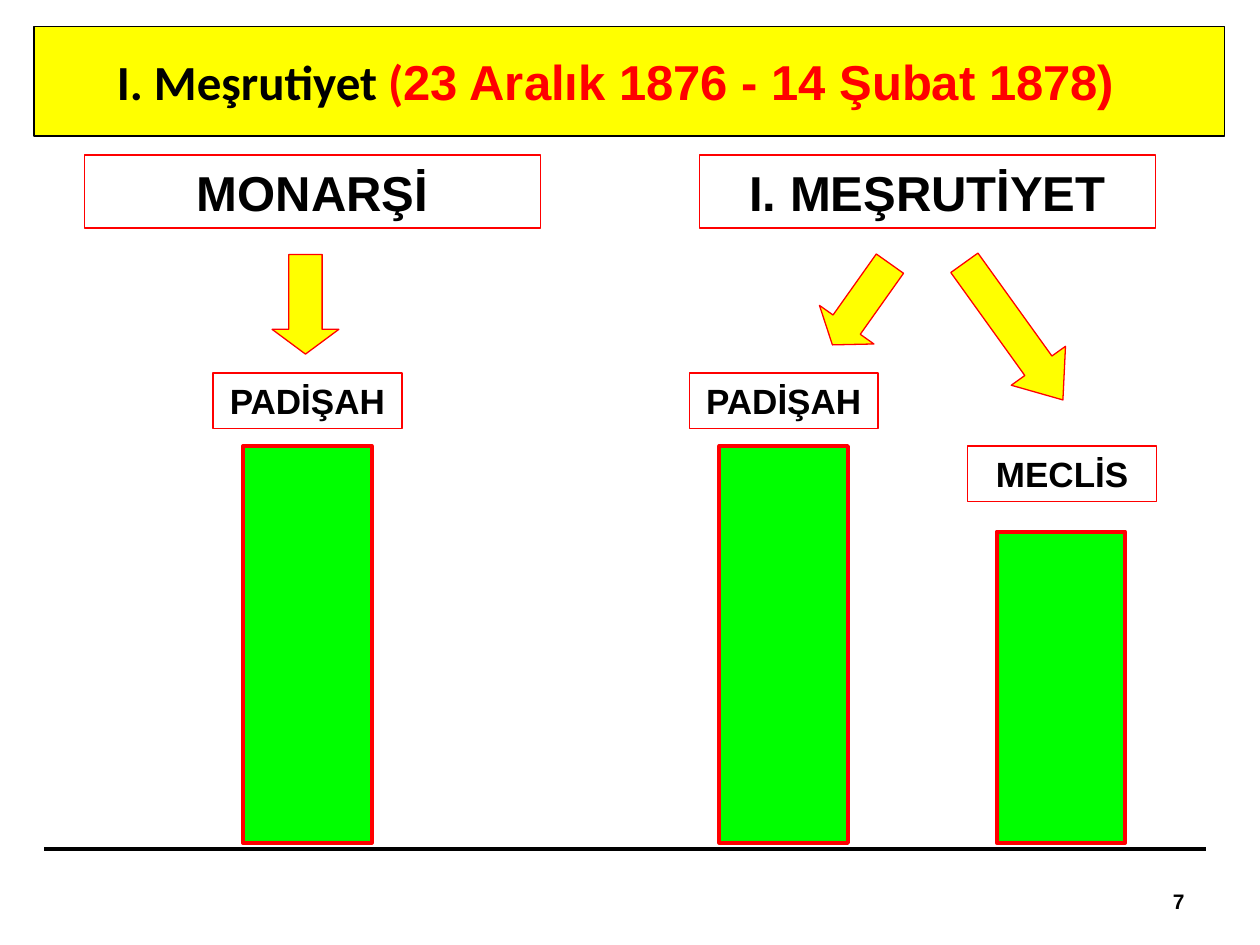
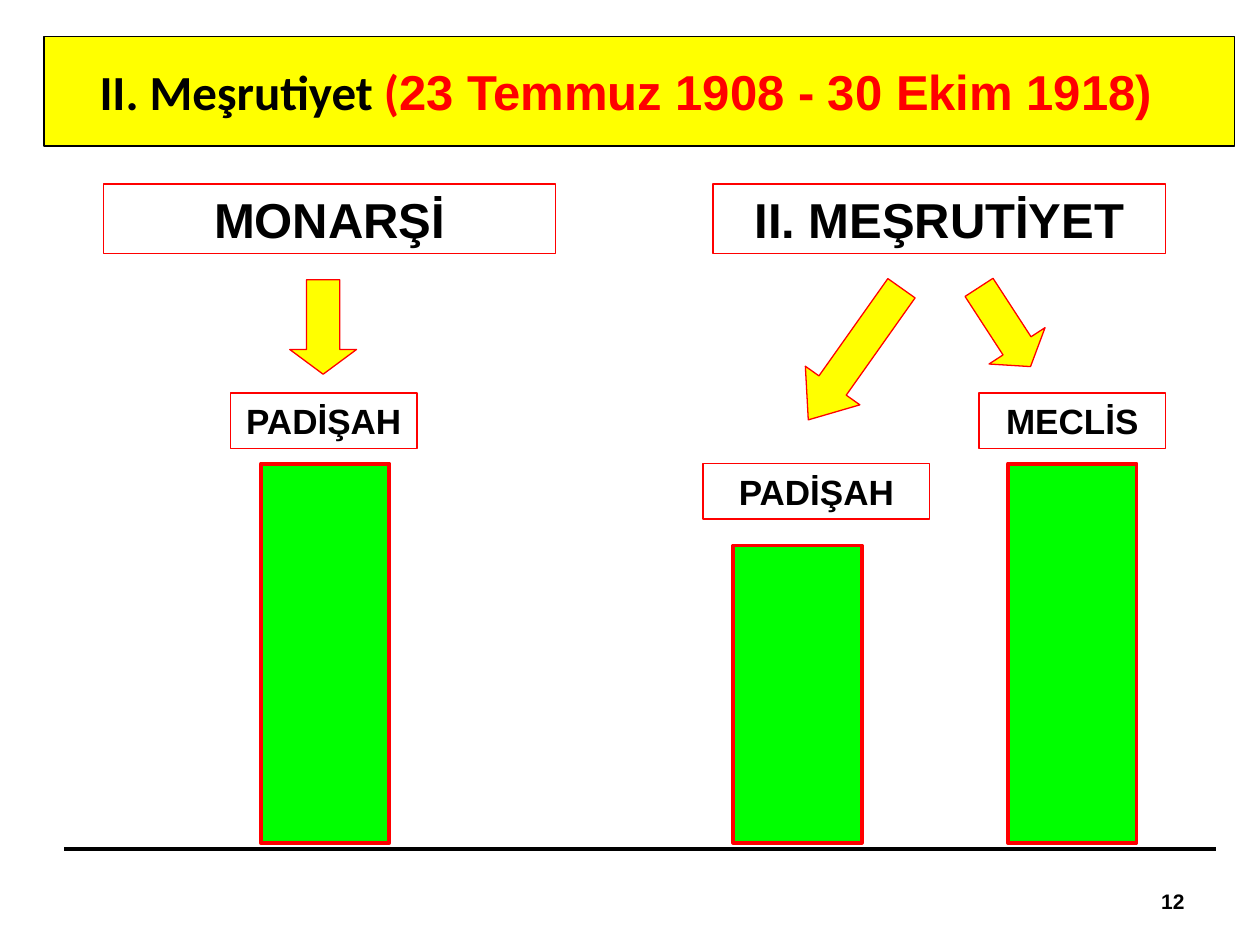
"""Build two slides comparing monarchy with each constitutional era."""
from dataclasses import dataclass

from lxml import etree
from pptx import Presentation
from pptx import util as u
from pptx.dml.color import RGBColor
from pptx.enum import shapes, text
from pptx.oxml import ns

PX = 9144
BLACK = RGBColor(0x00, 0x00, 0x00)
RED = RGBColor(0xFF, 0x00, 0x00)
YELLOW = RGBColor(0xFF, 0xFF, 0x00)
GREEN = RGBColor(0x00, 0xFF, 0x00)
ARIAL, CALIBRI = "Arial", "Calibri"
THIN, THICK = u.Pt(0.75), u.Pt(2.25)

BAND_W, BAND_H = 945, 87
TITLE_MARGIN, TITLE_SHIFT = 10, 22
LABEL_H = 44
BAR_W = 102
ARROW_W = 53
FLOOR_Y = 674
BAR_BOTTOM = 669


@dataclass
class Heading:
    text: str
    left: int


@dataclass
class Power:
    label: str
    left: int
    top: int
    width: int
    bar_left: int
    bar_top: int


@dataclass
class Arrow:
    left: int
    top: int
    height: int
    angle: float = 0
    head: float = 0.37


@dataclass
class Era:
    name: str
    dates: str
    number: str
    band: tuple[int, int]
    heading_box: tuple[int, int, int]
    headings: list[Heading]
    powers: list[Power]
    arrows: list[Arrow]
    floor: tuple[int, int]


ERAS = [
    Era(
        "I. Meşrutiyet ", "23 Aralık 1876 - 14 Şubat 1878)", "7",
        (27, 21), (123, 362, 58),
        [Heading("MONARŞİ", 67), Heading("I. MEŞRUTİYET", 555)],
        [Power("PADİŞAH", 169, 296, 150, 193, 354),
         Power("PADİŞAH", 547, 296, 150, 571, 354),
         Power("MECLİS", 768, 354, 150, 791, 422)],
        [Arrow(216, 202, 79), Arrow(657, 202, 79, 35.3),
         Arrow(778, 196, 134, 324.3, 0.63)],
        (35, 957),
    ),
    Era(
        "II. Meşrutiyet ", "23 Temmuz 1908 - 30 Ekim 1918)", "12",
        (35, 29), (146, 359, 55),
        [Heading("MONARŞİ", 82), Heading("II. MEŞRUTİYET", 566)],
        [Power("PADİŞAH", 183, 312, 148, 207, 368),
         Power("PADİŞAH", 558, 368, 180, 582, 433),
         Power("MECLİS", 777, 312, 148, 800, 368)],
        [Arrow(230, 222, 75), Arrow(652, 217, 128, 35.3, 0.63),
         Arrow(771, 222, 75, 327)],
        (51, 965),
    ),
]


def px(*lengths: int) -> list[int]:
    """Turn px lengths into EMU."""
    return [length * PX for length in lengths]


def add_run(p, words: str, size: int, font: str = ARIAL, color: RGBColor = BLACK) -> None:
    """Add one bold run to a paragraph."""
    r = p.add_run()
    r.text = words
    r.font.size = u.Pt(size)
    r.font.name = font
    r.font.bold = True
    r.font.color.rgb = color


def paint(sp, fill: RGBColor | None, line: RGBColor, width: int) -> None:
    """Set the fill and outline of a shape."""
    if fill is None:
        sp.fill.background()
    else:
        sp.fill.solid()
        sp.fill.fore_color.rgb = fill
    sp.line.color.rgb = line
    sp.line.width = width


def add_block(s, kind, box: tuple[int, int, int, int], fill: RGBColor | None = None,
              width: int = THIN):
    """Add a red-outlined preset shape."""
    sp = s.shapes.add_shape(kind, *px(*box))
    sp.shadow.inherit = False
    paint(sp, fill, RED, width)
    return sp


def add_label(s, words: str, size: int, box: tuple[int, int, int, int]) -> None:
    """Add an outlined box with centred text."""
    sp = add_block(s, shapes.MSO_SHAPE.RECTANGLE, box)
    tf = sp.text_frame
    tf.word_wrap = True
    tf.vertical_anchor = text.MSO_ANCHOR.MIDDLE
    p = tf.paragraphs[0]
    p.alignment = text.PP_ALIGN.CENTER
    add_run(p, words, size)


def add_power(s, power: Power) -> None:
    """Add a bar of power and its label."""
    add_block(s, shapes.MSO_SHAPE.RECTANGLE,
              (power.bar_left, power.bar_top, BAR_W, BAR_BOTTOM - power.bar_top),
              GREEN, THICK)
    add_label(s, power.label, 20, (power.left, power.top, power.width, LABEL_H))


def add_arrow(s, arrow: Arrow) -> None:
    """Add a rotated block arrow."""
    sp = add_block(s, shapes.MSO_SHAPE.DOWN_ARROW,
                   (arrow.left, arrow.top, ARROW_W, arrow.height), YELLOW)
    sp.adjustments[0] = 0.5
    sp.adjustments[1] = arrow.head
    sp.rotation = arrow.angle


def add_floor(s, ends: tuple[int, int]) -> None:
    """Add the line on which the bars stand."""
    x1, x2 = ends
    line = s.shapes.add_connector(shapes.MSO_CONNECTOR.STRAIGHT,
                                  *px(x1, FLOOR_Y, x2, FLOOR_Y))
    line.line.color.rgb = BLACK
    line.line.width = THICK
    etree.SubElement(line._element.spPr, ns.qn("a:effectLst"))


def set_title(s, era: Era) -> None:
    """Turn the title placeholder into a rounded yellow band."""
    sp = s.shapes.title
    sp.left, sp.top, sp.width, sp.height = px(*era.band, BAND_W, BAND_H)
    geometry = etree.SubElement(sp._element.spPr, ns.qn("a:prstGeom"), prst="roundRect")
    etree.SubElement(geometry, ns.qn("a:avLst"))
    paint(sp, YELLOW, BLACK, THIN)
    tf = sp.text_frame
    tf.auto_size = text.MSO_AUTO_SIZE.NONE
    tf.word_wrap = True
    tf.vertical_anchor = text.MSO_ANCHOR.MIDDLE
    tf.margin_left, tf.margin_right = px(TITLE_MARGIN, TITLE_MARGIN + TITLE_SHIFT)
    p = tf.paragraphs[0]
    p.alignment = text.PP_ALIGN.CENTER
    add_run(p, era.name, 28, CALIBRI)
    add_run(p, "(", 28, CALIBRI, RED)
    add_run(p, era.dates, 28, ARIAL, RED)


def add_number(s, number: str) -> None:
    """Add the slide number at the lower right."""
    tf = s.shapes.add_textbox(*px(717, 695, 233, 40)).text_frame
    tf.word_wrap = True
    tf.vertical_anchor = text.MSO_ANCHOR.MIDDLE
    p = tf.paragraphs[0]
    p.alignment = text.PP_ALIGN.RIGHT
    add_run(p, number, 12)


def add_era(prs, era: Era) -> None:
    """Add the slide of one era."""
    s = prs.slides.add_slide(prs.slide_layouts[5])
    set_title(s, era)
    add_number(s, era.number)
    top, width, height = era.heading_box
    for heading in era.headings:
        add_label(s, heading.text, 28, (heading.left, top, width, height))
    add_floor(s, era.floor)
    for power in era.powers:
        add_power(s, power)
    for arrow in era.arrows:
        add_arrow(s, arrow)


def main() -> None:
    """Build and save the presentation."""
    prs = Presentation()
    prs.slide_width, prs.slide_height = px(1000, 750)
    for era in ERAS:
        add_era(prs, era)
    prs.save("out.pptx")


if __name__ == "__main__":
    main()
